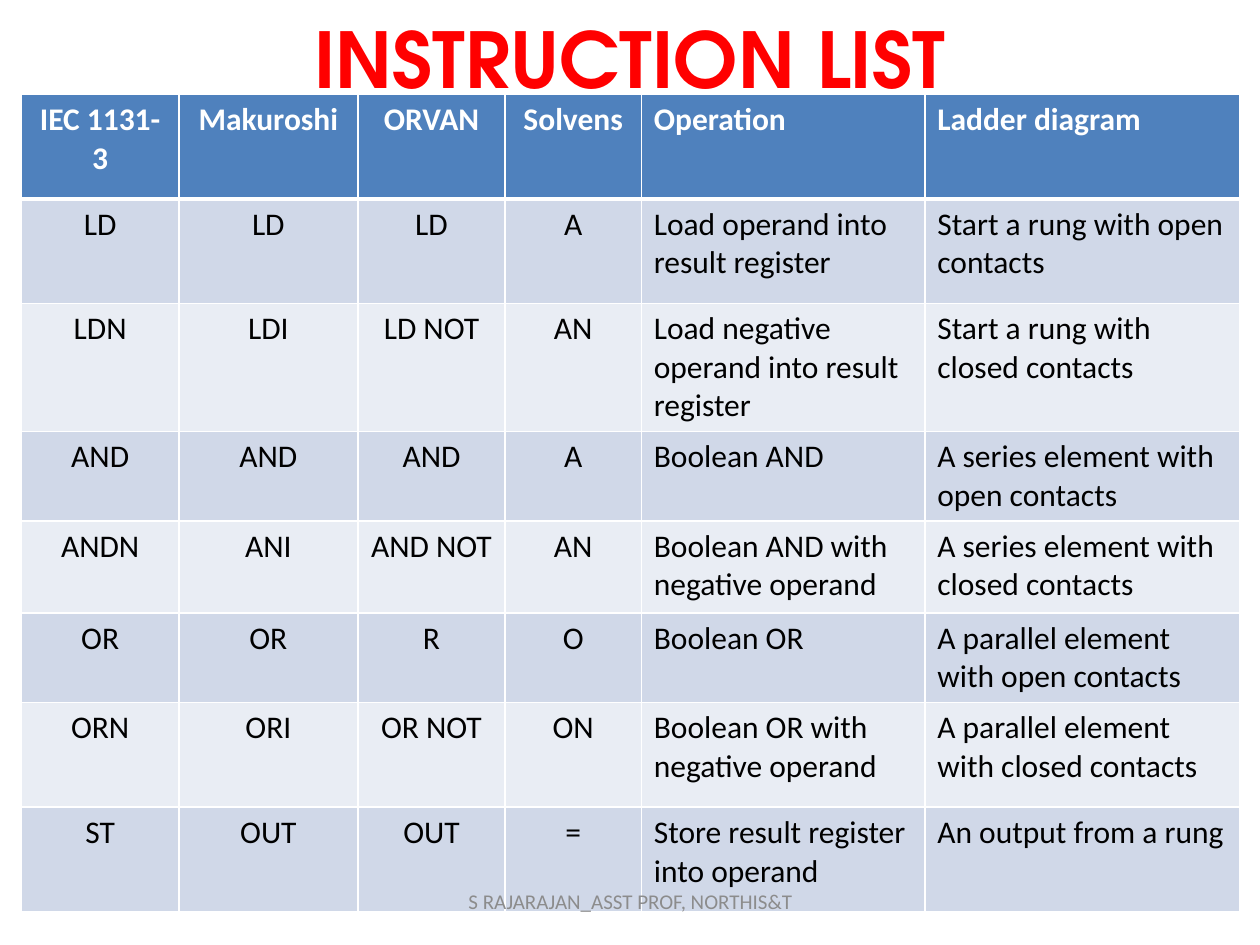
"""Build the slide that compares instruction lists across controllers."""
from dataclasses import dataclass

from lxml import etree
from pptx import Presentation
from pptx.dml.color import RGBColor
from pptx.enum import text
from pptx.oxml import ns
from pptx.util import Inches, Pt


@dataclass(frozen=True)
class Theme:
    """Colours, fonts and type sizes of the slide."""
    red: str = "FF0000"
    white: str = "FFFFFF"
    black: str = "000000"
    grey: str = "8C8C8C"
    blue: str = "4F81BD"
    bands: tuple[str, str] = ("D0D8E8", "E9EDF4")
    head: str = "TeX Gyre Adventor"
    body: str = "Calibri"
    big: int = 44
    mid: int = 18
    small: int = 12


@dataclass(frozen=True)
class Style:
    """Look of one run of text."""
    font: str
    size: int
    color: str
    bold: bool = False
    align: text.PP_ALIGN = text.PP_ALIGN.CENTER


@dataclass(frozen=True)
class Row:
    """One table row: its height and its six texts."""
    height: float
    cells: tuple[str, ...]


THEME = Theme()
COLS = (1.25, 1.42, 1.17, 1.08, 2.25, 2.5)
CODES = 4
ROWS = (
    Row(0.83, ("IEC 1131-3", "Makuroshi", "ORVAN", "Solvens",
               "Operation", "Ladder diagram")),
    Row(0.83, ("LD", "LD", "LD", "A", "Load operand into result register",
               "Start a rung with open contacts")),
    Row(0.93, ("LDN", "LDI", "LD NOT", "AN",
               "Load negative operand into result register",
               "Start a rung with closed contacts")),
    Row(0.52, ("AND", "AND", "AND", "A", "Boolean AND",
               "A series element with open contacts")),
    Row(0.73, ("ANDN", "ANI", "AND NOT", "AN",
               "Boolean AND with negative operand",
               "A series element with closed contacts")),
    Row(0.51, ("OR", "OR", "R", "O", "Boolean OR",
               "A parallel element with open contacts")),
    Row(0.83, ("ORN", "ORI", "OR NOT", "ON",
               "Boolean OR with negative operand",
               "A parallel element with closed contacts")),
    Row(0.83, ("ST", "OUT", "OUT", "=", "Store result register into operand",
               "An output from a rung")),
)


def write(frame, words: str, style: Style) -> None:
    """Add one styled run to the first paragraph of a frame."""
    para = frame.paragraphs[0]
    para.alignment = style.align
    run = para.add_run()
    run.text = words
    font = run.font
    font.name, font.size, font.bold = style.font, Pt(style.size), style.bold
    font.color.rgb = RGBColor.from_string(style.color)


def place(shape, left: float, top: float, width: float, height: float) -> None:
    """Move and size a shape, in inches."""
    shape.left, shape.top = Inches(left), Inches(top)
    shape.width, shape.height = Inches(width), Inches(height)


def edge(cell, side: str, width: int) -> None:
    """Draw one white border of a cell."""
    props = cell._tc.get_or_add_tcPr()
    line = etree.SubElement(props, ns.qn(f"a:ln{side}"), w=str(Pt(width)))
    fill = etree.SubElement(line, ns.qn("a:solidFill"))
    etree.SubElement(fill, ns.qn("a:srgbClr"), val=THEME.white)


def paint(cell, row: int, col: int, words: str) -> None:
    """Fill, border and label one table cell."""
    top = row == 0
    for side in "LRTB":
        thick = (row, side) in ((0, "B"), (1, "T"))
        edge(cell, side, 3 if thick else 1)
    cell.fill.solid()
    shade = THEME.blue if top else THEME.bands[(row - 1) % 2]
    cell.fill.fore_color.rgb = RGBColor.from_string(shade)
    align = text.PP_ALIGN.CENTER if col < CODES else text.PP_ALIGN.LEFT
    color = THEME.white if top else THEME.black
    write(cell.text_frame, words,
          Style(THEME.body, THEME.mid, color, top, align))


def grid(slide) -> None:
    """Draw the instruction table."""
    table = slide.shapes.add_table(
        len(ROWS), len(COLS), Inches(0.17), Inches(0.75),
        Inches(9.67), Inches(6.43)).table
    for col, width in zip(table.columns, COLS):
        col.width = Inches(width)
    for r, row in enumerate(ROWS):
        table.rows[r].height = Inches(row.height)
        for c, words in enumerate(row.cells):
            paint(table.cell(r, c), r, c, words)


def main() -> None:
    """Build and save the slide."""
    deck = Presentation()
    deck.slide_width, deck.slide_height = Inches(10), Inches(7.5)
    slide = deck.slides.add_slide(deck.slide_layouts[5])
    title = slide.shapes.title
    place(title, 0.5, 0, 9, 0.92)
    title.text_frame.vertical_anchor = text.MSO_ANCHOR.MIDDLE
    write(title.text_frame, "INSTRUCTION LIST",
          Style(THEME.head, THEME.big, THEME.red, True))
    grid(slide)
    foot = slide.shapes.add_textbox(
        Inches(3.42), Inches(6.95), Inches(3.17), Inches(0.4)).text_frame
    foot.word_wrap = True
    foot.vertical_anchor = text.MSO_ANCHOR.MIDDLE
    write(foot, "S RAJARAJAN_ASST PROF, NORTHIS&T",
          Style(THEME.body, THEME.small, THEME.grey))
    deck.save("out.pptx")


if __name__ == "__main__":
    main()
